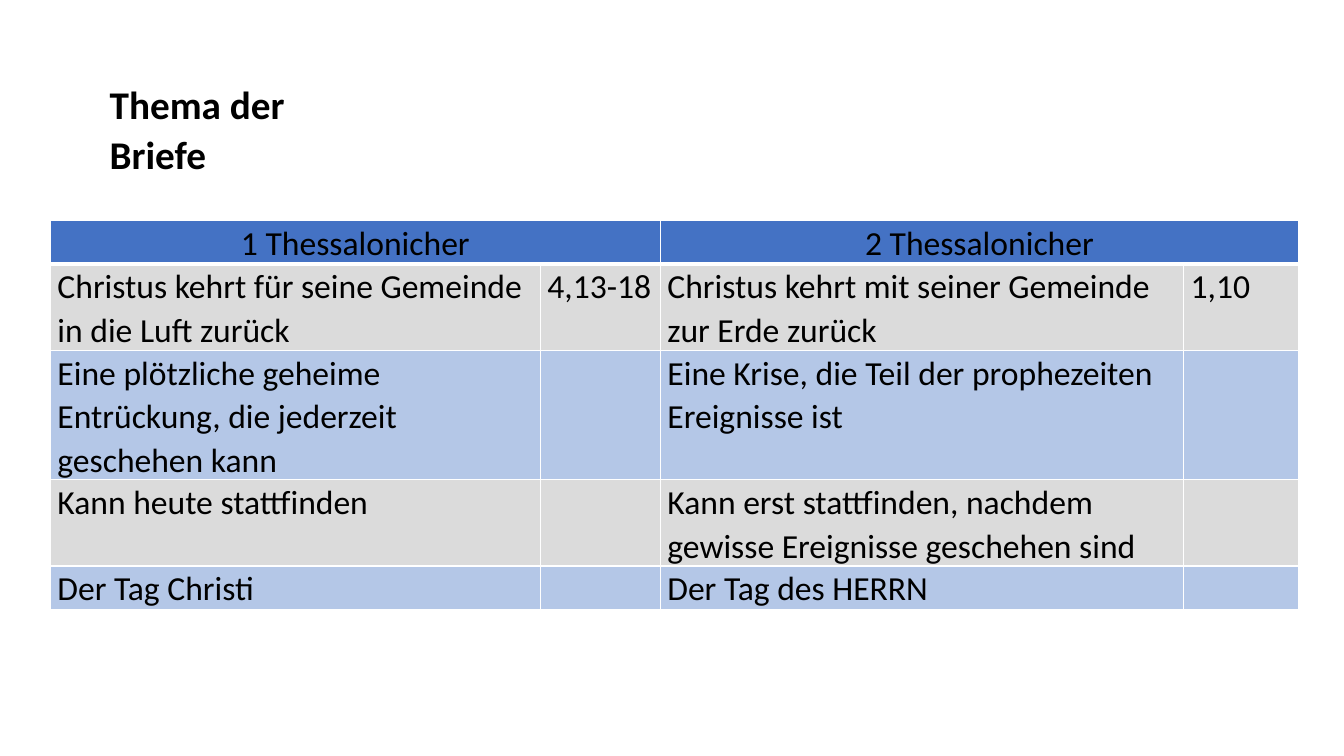
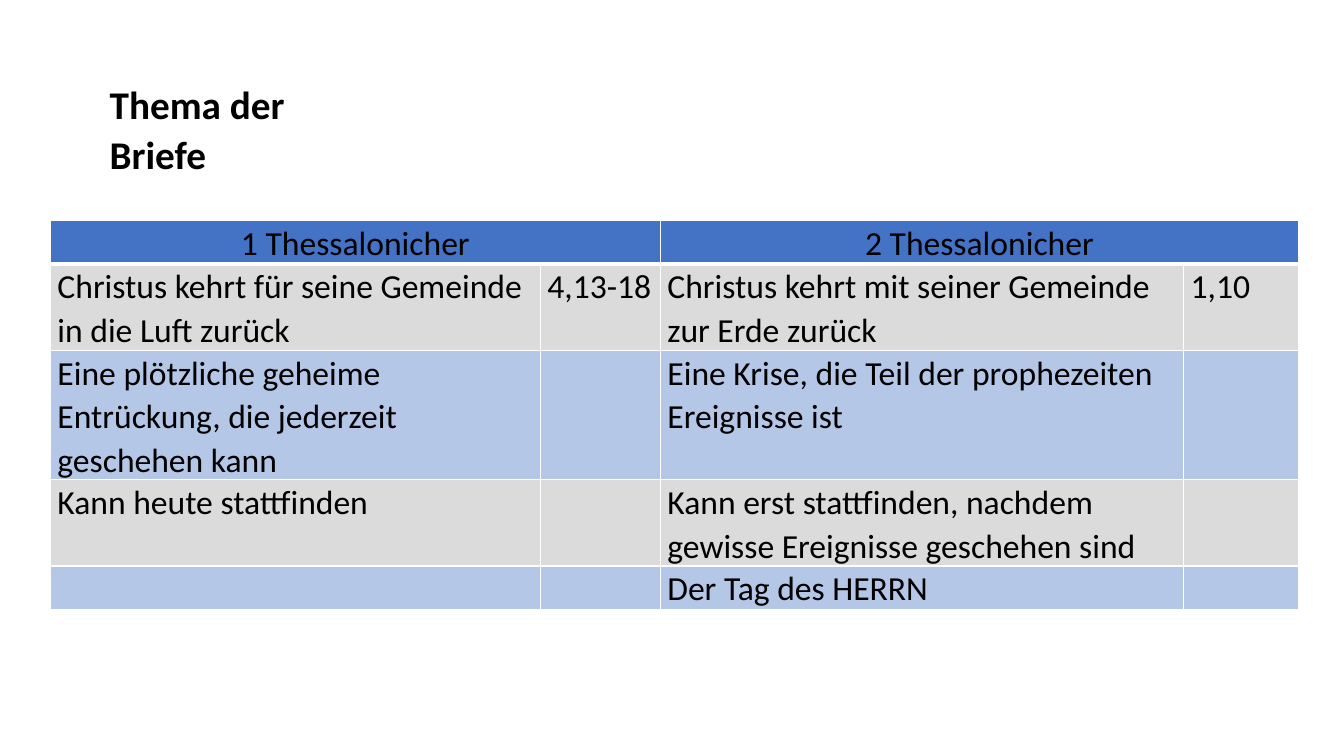
"""Build two slides that compare the themes of the letters to the Thessalonians."""
from lxml import etree
from pptx import Presentation
from pptx.dml.color import RGBColor
from pptx.enum.text import MSO_AUTO_SIZE, PP_ALIGN
from pptx.oxml.ns import qn
from pptx.util import Inches, Pt

CENTER, LEFT = PP_ALIGN.CENTER, PP_ALIGN.LEFT
FIT_SHAPE = MSO_AUTO_SIZE.SHAPE_TO_FIT_TEXT

COLORS = {"text": "000000", "header": "4472C4", "odd": "DBDBDB",
          "even": "B4C7E7", "border": "FFFFFF"}
FONT = "Calibri"
TITLE = "Thema der Briefe"
COLUMN_WIDTHS = [4.86, 1.19, 5.19, 1.14]
ROW_LINES = [1, 2, 3, 2, 1]
LINE_HEIGHT = 0.42
SHARED_ROWS = [
    ["1 Thessalonicher", "", "2 Thessalonicher", ""],
    ["Christus kehrt für seine Gemeinde in die Luft zurück", "4,13-18",
     "Christus kehrt mit seiner Gemeinde zur Erde zurück", "1,10"],
    ["Eine plötzliche geheime Entrückung, die jederzeit geschehen kann", "",
     "Eine Krise, die Teil der prophezeiten Ereignisse ist", ""],
    ["Kann heute stattfinden", "",
     "Kann erst stattfinden, nachdem gewisse Ereignisse geschehen sind", ""],
]
LAST_ROW_STARTS = ["Der Tag Christi", ""]


def style_paragraph(paragraph, size, bold=False, alignment=LEFT):
    paragraph.alignment = alignment
    paragraph.line_spacing = 1.07
    paragraph.font.name = FONT
    paragraph.font.size = Pt(size)
    paragraph.font.bold = bold
    paragraph.font.color.rgb = RGBColor.from_string(COLORS["text"])


def add_borders(cell, top, bottom):
    properties = cell._tc.get_or_add_tcPr()
    widths = {"a:lnL": 1, "a:lnR": 1, "a:lnT": top, "a:lnB": bottom}
    for position, (tag, width) in enumerate(widths.items()):
        line = etree.Element(qn(tag), w=str(Pt(width)))
        fill = etree.SubElement(line, qn("a:solidFill"))
        etree.SubElement(fill, qn("a:srgbClr"), val=COLORS["border"])
        properties.insert(position, line)


presentation = Presentation()
presentation.slide_width = Inches(13.33)
presentation.slide_height = Inches(7.5)

for last_row_start in LAST_ROW_STARTS:
    slide = presentation.slides.add_slide(presentation.slide_layouts[6])

    title = slide.shapes.add_textbox(Inches(0.99), Inches(0.71), Inches(2.97), Inches(0.58))
    title.text_frame.word_wrap = False
    title.text_frame.auto_size = FIT_SHAPE
    title.text_frame.text = TITLE
    title_paragraph = title.text_frame.paragraphs[0]
    title_paragraph.space_before = Pt(12)
    style_paragraph(title_paragraph, 28, bold=True)

    rows = SHARED_ROWS + [[last_row_start, "", "Der Tag des HERRN", ""]]
    table = slide.shapes.add_table(
        len(rows), len(COLUMN_WIDTHS), Inches(0.5), Inches(2.19),
        Inches(sum(COLUMN_WIDTHS)), Inches(LINE_HEIGHT * sum(ROW_LINES))).table
    table.first_row = False
    table.horz_banding = False
    for column, width in zip(table.columns, COLUMN_WIDTHS):
        column.width = Inches(width)
    for row, lines in zip(table.rows, ROW_LINES):
        row.height = Inches(LINE_HEIGHT * lines)
    for start in (0, 2):
        table.cell(0, start).merge(table.cell(0, start + 1))

    for row_index, texts in enumerate(rows):
        is_header = row_index == 0
        band = "header" if is_header else ("odd" if row_index % 2 else "even")
        for column_index, text in enumerate(texts):
            cell = table.cell(row_index, column_index)
            cell.margin_left = cell.margin_right = Inches(0.07)
            cell.margin_top = cell.margin_bottom = 0
            cell.fill.solid()
            cell.fill.fore_color.rgb = RGBColor.from_string(COLORS[band])
            add_borders(cell, top=3 if row_index == 1 else 1, bottom=3 if is_header else 1)
            if text:
                cell.text = text
                style_paragraph(cell.text_frame.paragraphs[0], 24,
                                alignment=CENTER if is_header else LEFT)

presentation.save("out.pptx")
